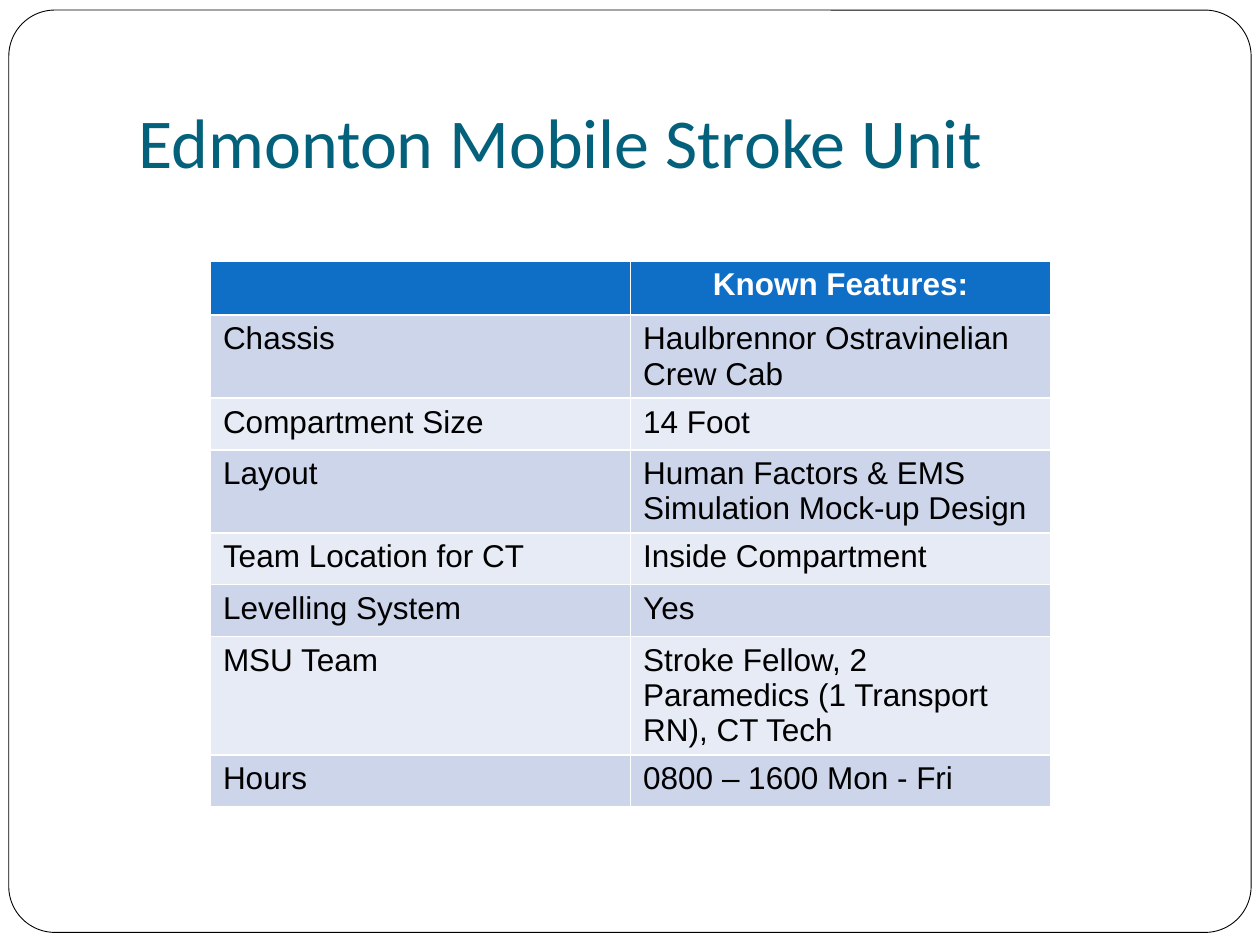
from pptx import Presentation
from pptx.dml.color import RGBColor
from pptx.enum.shapes import MSO_SHAPE as Shape
from pptx.enum.text import MSO_ANCHOR as Anchor, PP_ALIGN as Align
from pptx.util import Inches, Pt

FEATURES = [
    ("", "Known Features:"),
    ("Chassis", "Haulbrennor Ostravinelian Crew Cab"),
    ("Compartment Size", "14 Foot"),
    ("Layout", "Human Factors & EMS Simulation Mock-up Design"),
    ("Team Location for CT", "Inside Compartment"),
    ("Levelling System", "Yes"),
    ("MSU Team", "Stroke Fellow, 2 Paramedics (1 Transport RN), CT Tech"),
    ("Hours", "0800 – 1600 Mon - Fri"),
]
HEADER_FILL = "0F6FC6"
BAND_FILLS = ("E7EBF5", "CCD5EA")


def color(value):
    return RGBColor.from_string(value)


def set_font(paragraph, name, size, value, bold=False):
    font = paragraph.font
    font.name, font.size, font.bold = name, Pt(size), bold
    font.color.rgb = color(value)


def add_frame(slide, left, top, width, height):
    frame = slide.shapes.add_shape(
        Shape.ROUNDED_RECTANGLE, Inches(left), Inches(top), Inches(width), Inches(height))
    frame.adjustments[0] = 0.05
    frame.shadow.inherit = False
    frame.fill.solid()
    frame.fill.fore_color.rgb = color("FFFFFF")
    frame.line.color.rgb = color("000000")
    frame.line.width = Pt(0.5)
    slide.shapes._spTree.insert(2, frame._element)


def place_title(slide, text, left, top, width, height):
    title = slide.shapes.title
    title.left, title.top = Inches(left), Inches(top)
    title.width, title.height = Inches(width), Inches(height)
    text_frame = title.text_frame
    text_frame.text = text
    text_frame.vertical_anchor = Anchor.BOTTOM
    text_frame.margin_bottom = Inches(0.1)
    paragraph = text_frame.paragraphs[0]
    paragraph.alignment = Align.LEFT
    set_font(paragraph, "Calibri", 40, "04617B")


def add_feature_table(slide, left, top, width, header_height, row_height):
    height = header_height + row_height * (len(FEATURES) - 1)
    table = slide.shapes.add_table(
        len(FEATURES), 2, Inches(left), Inches(top), Inches(width), Inches(height)).table
    for row_index, texts in enumerate(FEATURES):
        is_header = row_index == 0
        table.rows[row_index].height = Inches(header_height if is_header else row_height)
        for column_index, text in enumerate(texts):
            cell = table.cell(row_index, column_index)
            cell.fill.solid()
            cell.fill.fore_color.rgb = color(HEADER_FILL if is_header else BAND_FILLS[row_index % 2])
            cell.text = text
            paragraph = cell.text_frame.paragraphs[0]
            paragraph.alignment = Align.CENTER if is_header else Align.LEFT
            set_font(paragraph, "Arial", 18, "FFFFFF" if is_header else "000000", is_header)


def main():
    presentation = Presentation()
    presentation.slide_width, presentation.slide_height = Inches(10), Inches(7.5)
    slide = presentation.slides.add_slide(presentation.slide_layouts[5])
    add_frame(slide, 0.07, 0.08, 9.86, 7.32)
    place_title(slide, "Edmonton Mobile Stroke Unit", 1, 0.3, 8.5, 1.25)
    add_feature_table(slide, 1.67, 2.07, 6.67, 0.43, 0.41)
    presentation.save("out.pptx")


if __name__ == "__main__":
    main()
